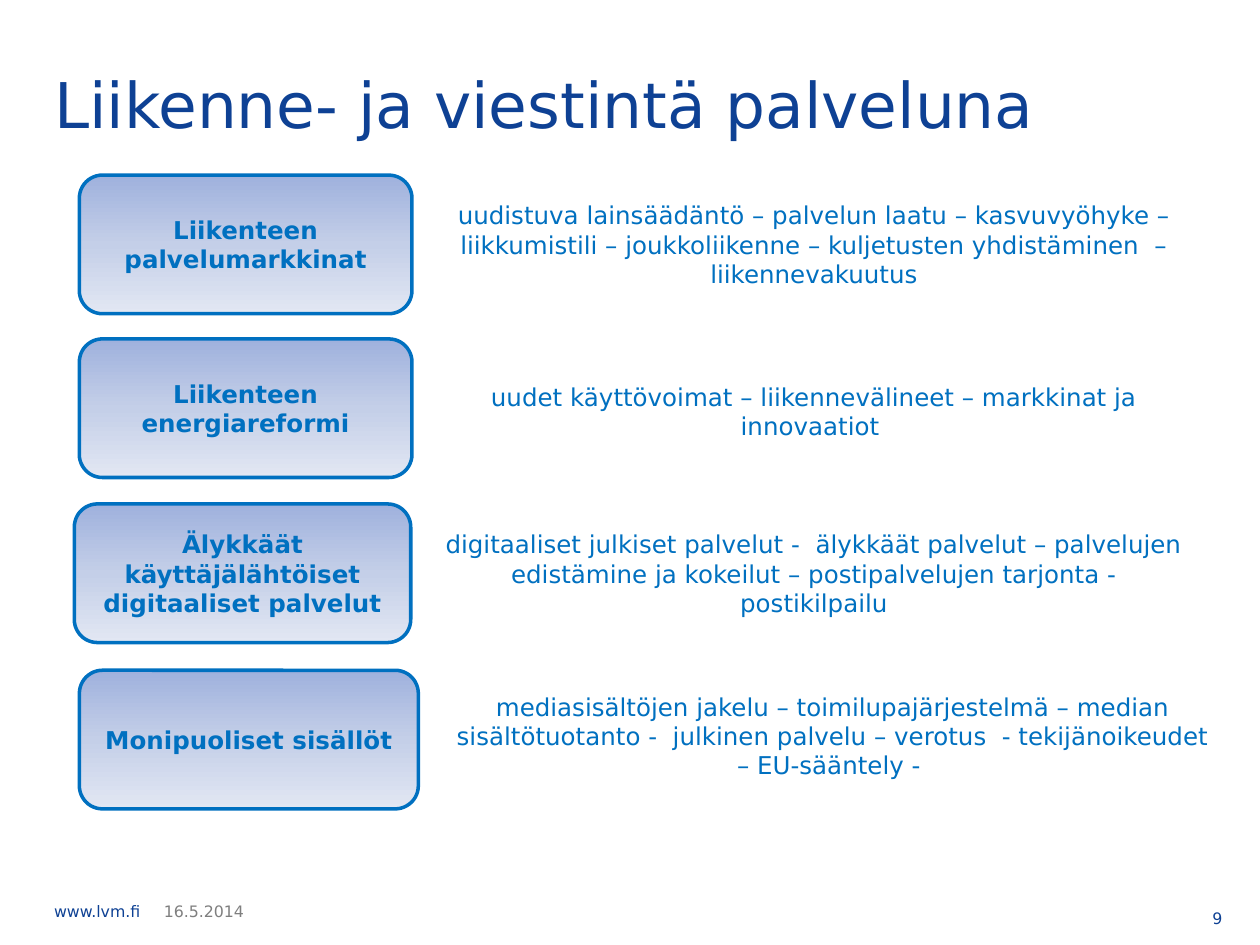
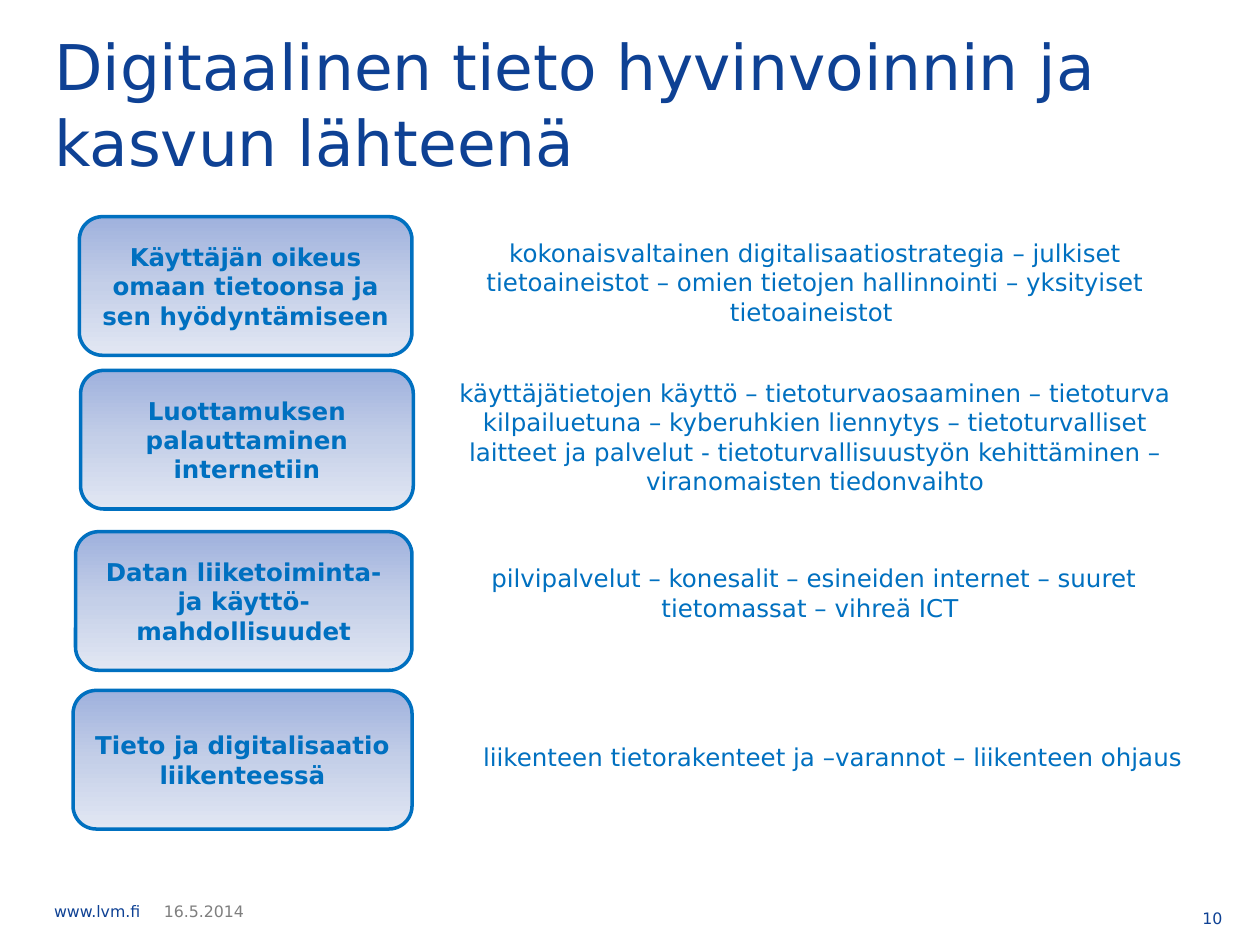
from copy import deepcopy

from pptx import Presentation
from pptx.dml.color import RGBColor
from pptx.enum.shapes import MSO_SHAPE as Shape
from pptx.enum.text import MSO_ANCHOR as Anchor, PP_ALIGN as Align
from pptx.oxml.ns import qn
from pptx.util import Inches, Pt

# Content: label, (left, top, width) of its box, description, (left, top, height) of its text
SLIDES = [
    {
        "title": "Liikenne- ja viestintä palveluna",
        "number": "9",
        "rows": [
            ("Liikenteen palvelumarkkinat", (0.63, 1.39, 2.64),
             "uudistuva lainsäädäntö – palvelun laatu – kasvuvyöhyke – liikkumistili – "
             "joukkoliikenne – kuljetusten yhdistäminen  –liikennevakuutus",
             (3.35, 1.54, 0.8)),
            ("Liikenteen energiareformi", (0.63, 2.69, 2.64),
             "uudet käyttövoimat – liikennevälineet – markkinat ja innovaatiot ",
             (3.35, 2.98, 0.59)),
            ("Älykkäät käyttäjälähtöiset digitaaliset palvelut", (0.59, 4, 2.67),
             "digitaaliset julkiset palvelut -  älykkäät palvelut – palvelujen "
             "edistämine ja kokeilut – postipalvelujen tarjonta - postikilpailu",
             (3.35, 4.15, 0.81)),
            ("Monipuoliset sisällöt", (0.63, 5.32, 2.69),
             "mediasisältöjen jakelu – toimilupajärjestelmä – median sisältötuotanto -  "
             "julkinen palvelu – verotus  - tekijänoikeudet – EU-sääntely - ",
             (3.5, 5.44, 0.87)),
        ],
    },
    {
        "title": "Digitaalinen tieto hyvinvoinnin ja kasvun lähteenä",
        "number": "10",
        "rows": [
            ("Käyttäjän oikeus omaan tietoonsa ja sen hyödyntämiseen", (0.63, 1.72, 2.64),
             "kokonaisvaltainen digitalisaatiostrategia – julkiset tietoaineistot – "
             "omien tietojen hallinnointi – yksityiset tietoaineistot ",
             (3.36, 1.84, 0.97)),
            ("Luottamuksen palauttaminen internetiin", (0.64, 2.94, 2.64),
             "käyttäjätietojen käyttö – tietoturvaosaaminen – tietoturva kilpailuetuna – "
             "kyberuhkien liennytys – tietoturvalliset laitteet ja palvelut - "
             "tietoturvallisuustyön kehittäminen – viranomaisten tiedonvaihto",
             (3.36, 2.95, 1.09)),
            ("Datan liiketoiminta- ja käyttö-mahdollisuudet", (0.6, 4.22, 2.67),
             "pilvipalvelut – konesalit – esineiden internet – suuret tietomassat – "
             "vihreä ICT ",
             (3.35, 4.42, 0.71)),
            ("Tieto ja digitalisaatio liikenteessä", (0.58, 5.48, 2.69),
             "liikenteen tietorakenteet ja –varannot – liikenteen ohjaus",
             (3.5, 5.84, 0.39)),
        ],
    },
]
SITE = "www.lvm.fi"
DATE = "16.5.2014"

# Shared style
FONT = "DejaVu Sans"
NAVY = RGBColor(0x0E, 0x41, 0x94)
BLUE = RGBColor(0x00, 0x70, 0xC0)
GRAY = RGBColor(0x7F, 0x7F, 0x7F)
GRADIENT = [
    (0, RGBColor(0x9F, 0xB1, 0xDD)),
    (0.5, RGBColor(0xC4, 0xCF, 0xE8)),
    (1, RGBColor(0xE2, 0xE7, 0xF3)),
]
LABEL_HEIGHT = 1.1
DESCRIPTION_WIDTH = 6.22


def write(box, text, size, color, align=Align.LEFT, anchor=Anchor.TOP, bold=False):
    frame = box.text_frame
    frame.text = text
    frame.word_wrap = True
    frame.vertical_anchor = anchor
    para = frame.paragraphs[0]
    para.alignment = align
    font = para.runs[0].font
    font.name, font.size, font.bold = FONT, Pt(size), bold
    font.color.rgb = color


def add_text(page, at, text, size, color, inset=True, **style):
    box = page.shapes.add_textbox(*map(Inches, at))
    write(box, text, size, color, **style)
    if not inset:
        frame = box.text_frame
        frame.margin_left = frame.margin_right = 0
        frame.margin_top = frame.margin_bottom = 0


def add_label(page, at, text):
    box = page.shapes.add_shape(Shape.ROUNDED_RECTANGLE, *map(Inches, at))
    box.shadow.inherit = False
    box.line.color.rgb = BLUE
    box.line.width = Pt(2)
    # Three-stop gradient running downwards
    box.fill.gradient()
    box.fill.gradient_angle = 270
    stop_list = box.fill.gradient_stops[0]._gs.getparent()
    stop_list.insert(1, deepcopy(stop_list.find(qn("a:gs"))))
    for stop, (position, color) in zip(box.fill.gradient_stops, GRADIENT):
        stop.position = position
        stop.color.rgb = color
    write(box, text, 14, BLUE, Align.CENTER, Anchor.MIDDLE, bold=True)


def add_page(deck, content):
    page = deck.slides.add_slide(deck.slide_layouts[6])
    # Title and footer
    add_text(page, (0.43, 0.35, 9, 0.94), content["title"], 36, NAVY,
             inset=False, anchor=Anchor.MIDDLE)
    add_text(page, (0.43, 7.16, 0.87, 0.15), SITE, 9, NAVY, inset=False)
    add_text(page, (1.3, 7.16, 1.26, 0.3), DATE, 9, GRAY, inset=False)
    add_text(page, (8.78, 7.16, 1.02, 0.3), content["number"], 9, NAVY, align=Align.RIGHT)
    # Theme rows
    for label, label_place, description, (left, top, height) in content["rows"]:
        add_label(page, (*label_place, LABEL_HEIGHT), label)
        add_text(page, (left, top, DESCRIPTION_WIDTH, height), description, 14, BLUE,
                 align=Align.CENTER)


def main():
    deck = Presentation()
    deck.slide_width, deck.slide_height = Inches(10), Inches(7.5)
    for content in SLIDES:
        add_page(deck, content)
    deck.save("out.pptx")


if __name__ == "__main__":
    main()
